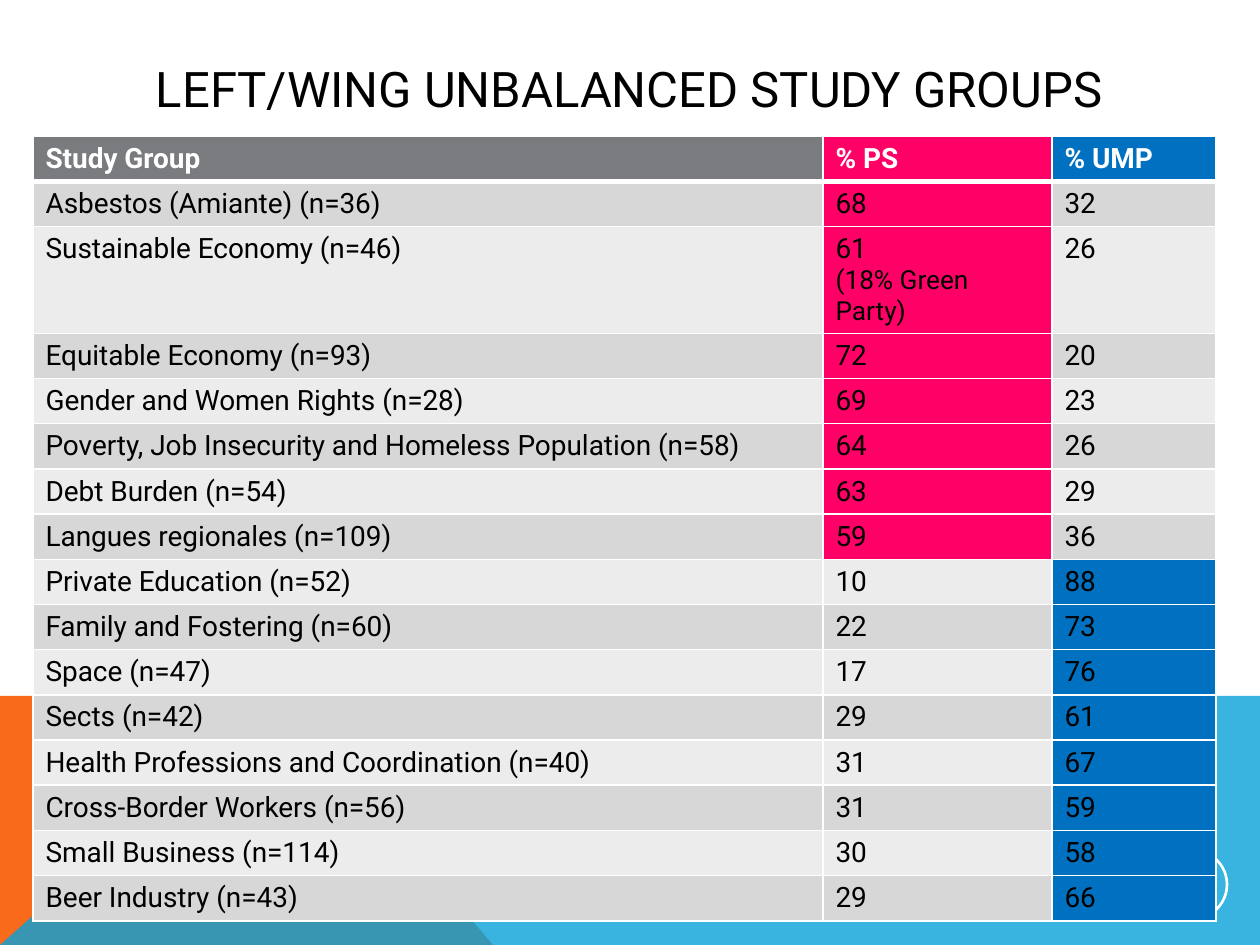
"""Build the slide on left- and right-leaning unbalanced study groups."""
from lxml import etree
from pptx import Presentation, util as u
from pptx.dml.color import RGBColor
from pptx.enum import shapes, text
from pptx.oxml.ns import qn

PX = 914400 / 126
FONT = "Roboto"
COLORS = {
    "white": "FFFFFF", "black": "000000", "orange": "F96A1B", "sky": "08A1D9",
    "header": "797B7E", "dark_row": "D7D7D8", "light_row": "ECECEC",
    "ps": "FF0066", "ump": "0070C0",
}
HEADINGS = ("Study Group", "% PS", "% UMP")
HEADING_FILLS = ("header", "ps", "ump")
GROUPS = [
    ("Asbestos (Amiante) (n=36)", 68, 32),
    ("Sustainable Economy (n=46)", 61, 26),
    ("Equitable Economy (n=93)", 72, 20),
    ("Gender and Women Rights (n=28)", 69, 23),
    ("Poverty, Job Insecurity and Homeless Population (n=58)", 64, 26),
    ("Debt Burden (n=54)", 63, 29),
    ("Langues regionales (n=109)", 59, 36),
    ("Private Education (n=52)", 10, 88),
    ("Family and Fostering (n=60)", 22, 73),
    ("Space (n=47)", 17, 76),
    ("Sects (n=42)", 29, 61),
    ("Health Professions and Coordination (n=40)", 31, 67),
    ("Cross-Border Workers (n=56)", 31, 59),
    ("Small Business (n=114)", 30, 58),
    ("Beer Industry (n=43)", 29, 66),
]
PS_NOTES = {"Sustainable Economy (n=46)": "(18% Green Party)"}


def px(length):
    return u.Emu(round(length * PX))


def rgb(color):
    return RGBColor.from_string(COLORS[color])


def paint(fill, color):
    fill.solid()
    fill.fore_color.rgb = rgb(color)


def add_run(paragraph, words, size, color, bold=False):
    run = paragraph.add_run()
    run.text = words
    run.font.name, run.font.size, run.font.bold = FONT, u.Pt(size), bold
    run.font.color.rgb = rgb(color)


def add_band(slide, box, points, color, opacity=100):
    left, top = box[:2]
    builder = slide.shapes.build_freeform(*points[0], scale=PX)
    builder.add_line_segments(points[1:], close=True)
    band = builder.convert_to_shape(px(left), px(top))
    band.shadow.inherit = False
    band.line.fill.background()
    paint(band.fill, color)
    if opacity < 100:
        tint = band.fill._xPr.find(qn("a:solidFill"))[0]
        etree.SubElement(tint, qn("a:alpha"), val=str(opacity * 1000))


def add_footer(slide, box):
    width, height = box[2:]
    fold = (281, 0)
    add_band(slide, box, [(0, height), (0, 0), fold, (493, height)], "orange")
    add_band(slide, box, [(0, height), fold, (width, 0), (width, height)], "sky", 80)


def add_page_ring(slide, box):
    ring = slide.shapes.add_shape(shapes.MSO_SHAPE.OVAL, *map(px, box))
    ring.shadow.inherit = False
    ring.fill.background()
    ring.line.color.rgb = rgb("white")
    ring.line.width = u.Pt(1.5)


def add_title(slide, box):
    title = slide.shapes.title
    title.left, title.top, title.width, title.height = map(px, box)
    title.text_frame.vertical_anchor = text.MSO_ANCHOR.MIDDLE
    heading = title.text_frame.paragraphs[0]
    heading.alignment = text.PP_ALIGN.CENTER
    add_run(heading, "LEFT/WING UNBALANCED STUDY GROUPS", 28, "black")


def add_borders(cell, top, bottom):
    properties = cell._tc.get_or_add_tcPr()
    for side, points in (("L", 1), ("R", 1), ("T", top), ("B", bottom)):
        border = etree.SubElement(properties, qn(f"a:ln{side}"), w=str(u.Pt(points)))
        solid = etree.SubElement(border, qn("a:solidFill"))
        etree.SubElement(solid, qn("a:srgbClr"), val=COLORS["white"])


def fill_row(row, values, fills, color, bold=False, top=1, bottom=1):
    for cell, value, fill in zip(row.cells, values, fills):
        add_borders(cell, top, bottom)
        paint(cell.fill, fill)
        add_run(cell.text_frame.paragraphs[0], str(value), 16, color, bold)


def add_group_table(slide, box):
    frame = slide.shapes.add_table(len(GROUPS) + 1, len(HEADINGS), *map(px, box))
    table = frame.table
    for column, width in zip(table.columns, (790, 229, 164)):
        column.width = px(width)
    for row in table.rows:
        row.height = px(38)
    fill_row(table.rows[0], HEADINGS, HEADING_FILLS, "white", True, bottom=3)
    for index, (group, ps, ump) in enumerate(GROUPS, 1):
        stripe = "dark_row" if index % 2 else "light_row"
        fills = (stripe, "ps" if ps > ump else stripe, "ump" if ump > ps else stripe)
        fill_row(table.rows[index], (group, ps, ump), fills, "black",
                 top=3 if index == 1 else 1)
        if group in PS_NOTES:
            note = table.cell(index, 1).text_frame.add_paragraph()
            add_run(note, PS_NOTES[group], 15, "black")


def main():
    deck = Presentation()
    deck.slide_width, deck.slide_height = px(1260), px(945)
    slide = deck.slides.add_slide(deck.slide_layouts[5])
    paint(slide.background.fill, "white")
    add_footer(slide, (0, 696, 1260, 249))
    add_title(slide, (19, 50, 1220, 76))
    add_page_ring(slide, (1158, 850, 69, 69))
    add_group_table(slide, (33, 136, 1183, 608))
    deck.save("out.pptx")


if __name__ == "__main__":
    main()
